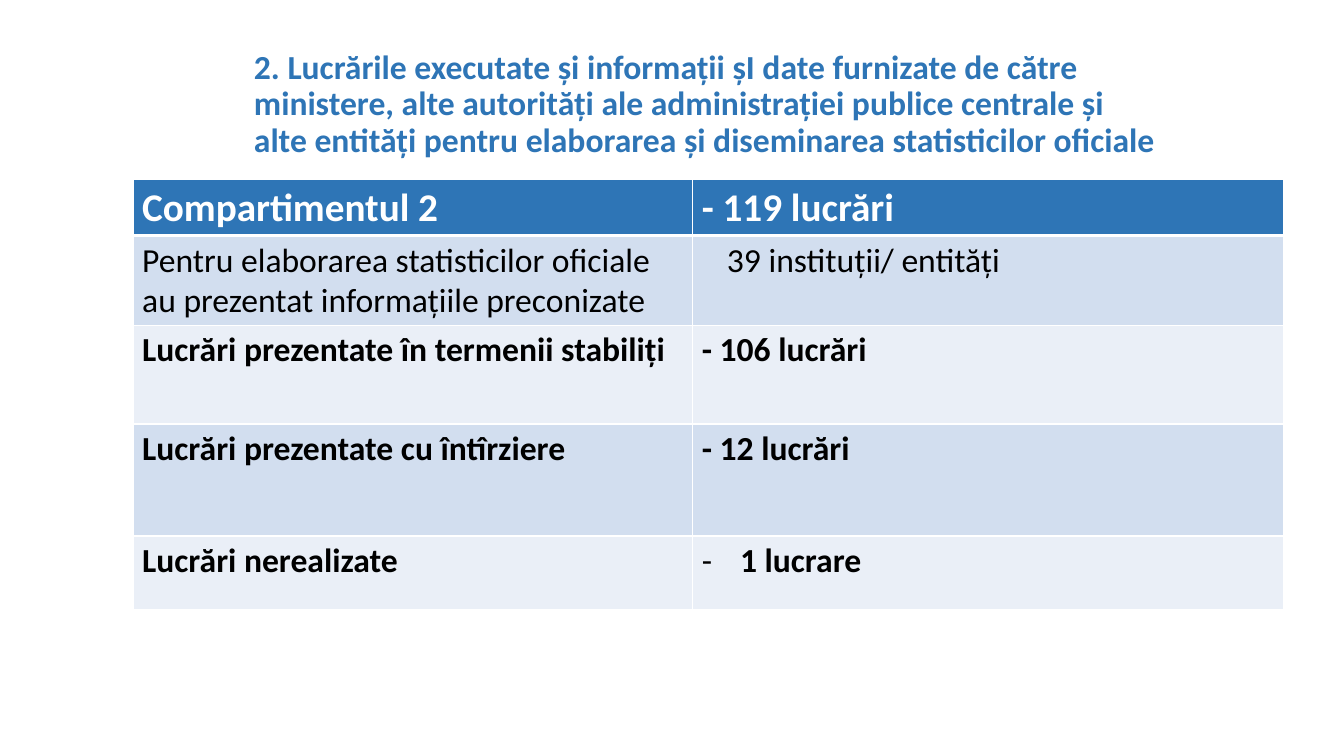
import pptx
import pptx.util
import pptx.dml.color
import pptx.enum.text
import pptx.oxml.ns
import lxml.etree

Inches, Pt = pptx.util.Inches, pptx.util.Pt
RGBColor = pptx.dml.color.RGBColor

# Content
TITLE = ("2. Lucrările executate și informații șI date furnizate de către "
         "ministere, alte autorități ale administrației publice centrale și "
         "alte entități pentru elaborarea și diseminarea statisticilor oficiale")
ROWS = [
    ("Compartimentul 2", "- 119 lucrări"),
    ("Pentru elaborarea statisticilor oficiale au prezentat informațiile preconizate",
     "39 instituții/ entități"),
    ("Lucrări prezentate în termenii stabiliți", "- 106 lucrări"),
    ("Lucrări prezentate cu întîrziere", "- 12 lucrări"),
    ("Lucrări nerealizate", "1 lucrare"),
]
PLAIN_ROW = 1
BULLET_ROW = 4
# Left margin and first-line indent of the value column, by row
VALUE_INDENTS = {1: (0.25, 0), 2: (0.25, -0.25), 3: (0.25, -0.25), 4: (0.38, -0.38)}

# Grid and style
COLUMN_WIDTHS = [5.55, 5.86]
ROW_HEIGHTS = [0.5, 0.79, 0.98, 1.11, 0.73]
TABLE_LEFT, TABLE_TOP = 1.32, 1.78
FONT = "Calibri"
BLUE = RGBColor(0x2E, 0x75, 0xB6)
BAND_DARK = RGBColor(0xD2, 0xDE, 0xEF)
BAND_LIGHT = RGBColor(0xEA, 0xEF, 0xF7)
WHITE = RGBColor(0xFF, 0xFF, 0xFF)
BLACK = RGBColor(0, 0, 0)


def add_child(parent, tag, **attributes):
    child = lxml.etree.SubElement(parent, pptx.oxml.ns.qn(tag))
    for name, value in attributes.items():
        child.set(name, str(value))
    return child


def style_text(para, size, color, bold):
    for span in para.runs:
        span.font.name = FONT
        span.font.size = Pt(size)
        span.font.bold = bold
        span.font.color.rgb = color


def add_borders(cell, top, bottom):
    properties = cell._tc.get_or_add_tcPr()
    sides = {"a:lnL": 1, "a:lnR": 1, "a:lnT": top, "a:lnB": bottom}
    for position, (tag, width) in enumerate(sides.items()):
        line = add_child(properties, tag, w=int(Pt(width)))
        add_child(add_child(line, "a:solidFill"), "a:srgbClr", val=WHITE)
        properties.insert(position, line)


def fill_cell(cell, row, column):
    header = row == 0
    cell.margin_left = cell.margin_right = Pt(6.5)
    cell.margin_top = cell.margin_bottom = Pt(3.25)
    cell.fill.solid()
    cell.fill.fore_color.rgb = BLUE if header else BAND_DARK if row % 2 else BAND_LIGHT
    add_borders(cell, top=3 if row == 1 else 1, bottom=3 if header else 1)

    para = cell.text_frame.paragraphs[0]
    para.text = ROWS[row][column]
    if column == 1 and row in VALUE_INDENTS:
        margin, indent = VALUE_INDENTS[row]
        properties = para._p.get_or_add_pPr()
        properties.set("marL", str(Inches(margin)))
        properties.set("indent", str(Inches(indent)))
        if row == BULLET_ROW:
            add_child(properties, "a:buFont", typeface=FONT)
            add_child(properties, "a:buChar", char="-")
    if column == 0 or row != PLAIN_ROW:
        para.space_after = Pt(3 if column == 1 and row == BULLET_ROW else 8)
    style_text(para, 28 if header else 24, WHITE if header else BLACK, row != PLAIN_ROW)


def main():
    deck = pptx.Presentation()
    deck.slide_width, deck.slide_height = Inches(13.33), Inches(7.5)
    page = deck.slides.add_slide(deck.slide_layouts[6])

    # Title
    box = page.shapes.add_textbox(Inches(2.42), Inches(0.3), Inches(9.19), Inches(1.48))
    frame = box.text_frame
    frame.word_wrap = True
    frame.vertical_anchor = pptx.enum.text.MSO_ANCHOR.MIDDLE
    frame.text = TITLE
    frame.paragraphs[0].line_spacing = 0.9
    style_text(frame.paragraphs[0], 24, BLUE, True)

    # Table
    table = page.shapes.add_table(
        len(ROWS), len(COLUMN_WIDTHS), Inches(TABLE_LEFT), Inches(TABLE_TOP),
        Inches(sum(COLUMN_WIDTHS)), Inches(sum(ROW_HEIGHTS))).table
    for column, width in enumerate(COLUMN_WIDTHS):
        table.columns[column].width = Inches(width)
    for row, height in enumerate(ROW_HEIGHTS):
        table.rows[row].height = Inches(height)
        for column in range(len(COLUMN_WIDTHS)):
            fill_cell(table.cell(row, column), row, column)

    deck.save("out.pptx")


if __name__ == "__main__":
    main()
